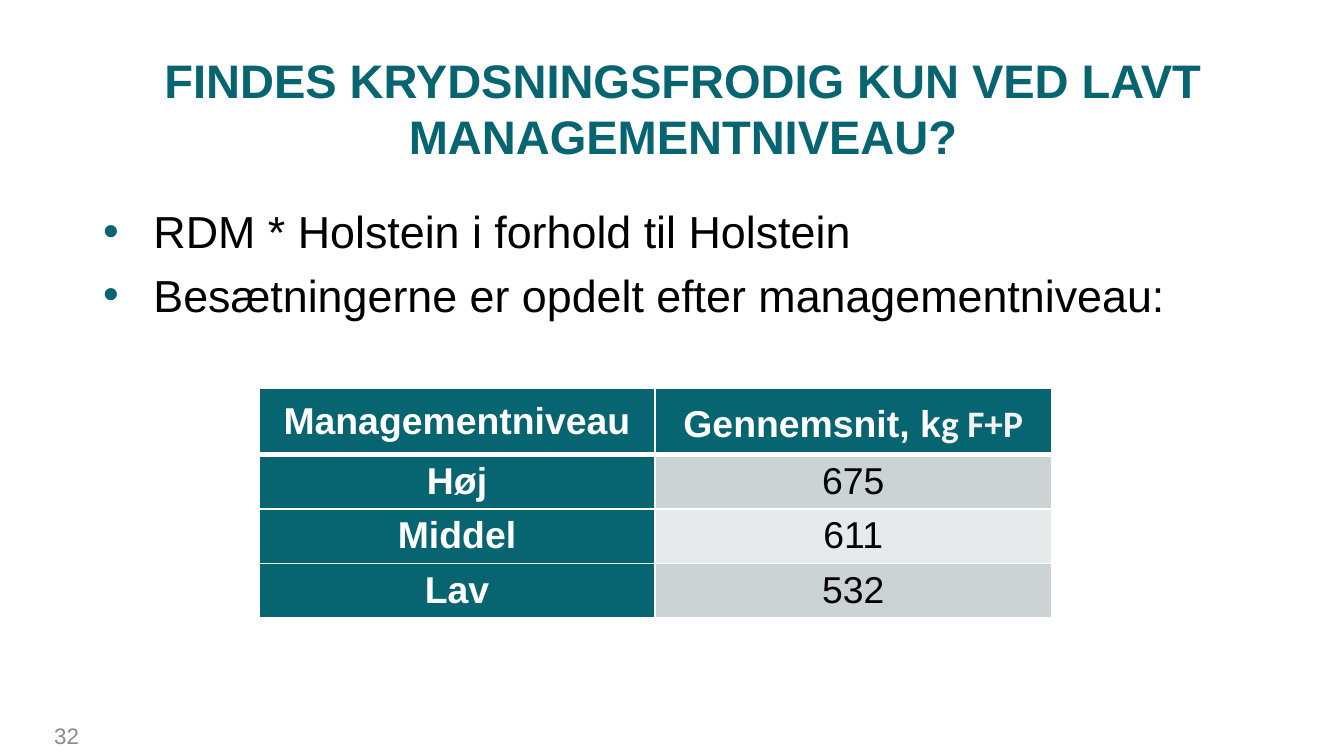
"""Build the slide on crossbreeding and management level."""
from lxml.etree import SubElement
from pptx import Presentation
from pptx.dml.color import RGBColor
from pptx.enum.text import MSO_ANCHOR, MSO_AUTO_SIZE, PP_ALIGN
from pptx.oxml.ns import qn
from pptx.util import Pt

PX = 9525
TEAL, WHITE, BLACK = "076471", "FFFFFF", "000000"


def paint(run, size, color, bold=False, face="Arial"):
    font = run.font
    font.size, font.bold, font.name = Pt(size), bold, face
    font.color.rgb = RGBColor.from_string(color)


def place(shape, left, top, width, height):
    shape.left, shape.top = left * PX, top * PX
    shape.width, shape.height = width * PX, height * PX


deck = Presentation()
deck.slide_width, deck.slide_height = 960 * PX, 540 * PX
slide = deck.slides.add_slide(deck.slide_layouts[1])

title = slide.shapes.title
place(title, 64, 32, 848, 90)
frame = title.text_frame
frame.text = "FINDES KRYDSNINGSFRODIG KUN VED LAVT MANAGEMENTNIVEAU?"
frame.auto_size = MSO_AUTO_SIZE.NONE
frame.vertical_anchor = MSO_ANCHOR.MIDDLE
frame.paragraphs[0].alignment = PP_ALIGN.CENTER
paint(frame.paragraphs[0].runs[0], 25.2, TEAL, True)

body = slide.placeholders[1]
place(body, 64, 141, 848, 355)
frame = body.text_frame
frame.text = "RDM * Holstein i forhold til Holstein\nBesætningerne er opdelt efter managementniveau:"
frame.auto_size = MSO_AUTO_SIZE.NONE
for para, gap in zip(frame.paragraphs, (0, 5)):
    para.space_before = Pt(gap)
    props = para._p.get_or_add_pPr()
    props.set("marL", str(36 * PX))
    props.set("indent", str(-36 * PX))
    SubElement(SubElement(props, qn("a:buClr")), qn("a:srgbClr"), val=TEAL)
    SubElement(props, qn("a:buFont"), typeface="Arial")
    SubElement(props, qn("a:buChar"), char="•")
    paint(para.runs[0], 24, BLACK)

rows = [
    ("Managementniveau", "Gennemsnit, k"),
    ("Høj", "675"),
    ("Middel", "611"),
    ("Lav", "532"),
]
fills = [TEAL, "CCD3D5", "E7EAEB", "CCD3D5"]
table = slide.shapes.add_table(4, 2, 185 * PX, 277 * PX, 566 * PX, 164 * PX).table
for col in table.columns:
    col.width = 283 * PX
for r, words in enumerate(rows):
    head = r == 0
    table.rows[r].height = (47 if head else 39) * PX
    for c, word in enumerate(words):
        cell = table.cell(r, c)
        cell.margin_left = cell.margin_right = (10 if head else 7) * PX
        cell.margin_top = cell.margin_bottom = (5 if head else 0) * PX
        props = cell._tc.get_or_add_tcPr()
        for side in ("L", "R", "T", "B"):
            thick = (r, side) in ((0, "B"), (1, "T"))
            line = SubElement(props, qn(f"a:ln{side}"), w=str(Pt(3 if thick else 1)))
            SubElement(SubElement(line, qn("a:solidFill")), qn("a:srgbClr"), val=WHITE)
        cell.fill.solid()
        cell.fill.fore_color.rgb = RGBColor.from_string(fills[r] if c else TEAL)
        para = cell.text_frame.paragraphs[0]
        para.text = word
        para.alignment = PP_ALIGN.CENTER
        para.line_spacing = 1.15
        bold = head or c == 0
        paint(para.runs[0], 20, WHITE if bold else BLACK, bold)

unit = table.cell(0, 1).text_frame.paragraphs[0].add_run()
unit.text = "g F+P"
paint(unit, 20, "F2F2F2", True, "Calibri")

page = slide.shapes.add_textbox(0, 511 * PX, 66 * PX, 29 * PX)
frame = page.text_frame
frame.word_wrap = True
frame.text = "32"
frame.paragraphs[0].alignment = PP_ALIGN.RIGHT
paint(frame.paragraphs[0].runs[0], 12, "8C8C8C")

deck.save("out.pptx")
